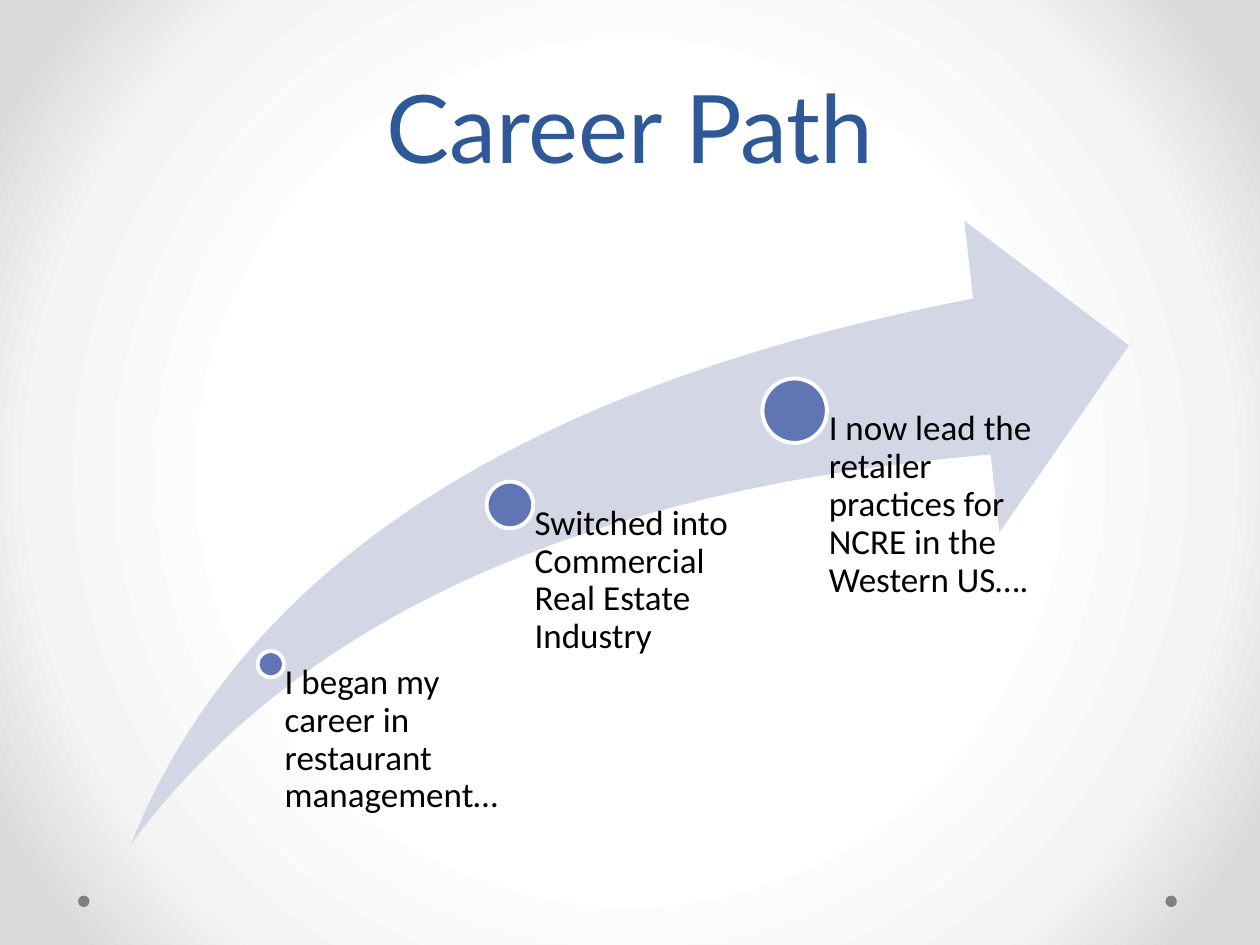
from lxml import etree
from pptx import Presentation
from pptx import util as u
from pptx.dml.color import RGBColor
from pptx.enum import shapes, text

TITLE = "Career Path"
STEPS = [
    ("I began my career in restaurant management…", 5.46, 13.39, 0.53, 4.7),
    ("Switched into Commercial Real Estate Industry", 10.28, 10.18, 0.94, 4.83),
    ("I now lead the retailer practices for NCRE in the Western US….", 16.02, 8.28, 1.3, 4.83),
]
CORNER_DOTS = [1.69, 23.61]
DOT_Y, DOT_SIZE = 18.17, 0.23
ARROW = (2.64, 4.45, 20.12, 12.57)
ARROW_BOTTOM = ARROW[1] + ARROW[3]
BACKGROUND = [(50, "FFFFFF"), (76, "F4F4F4"), (92, "DADADA")]
NS = "http://schemas.openxmlformats.org/drawingml/2006/main"


def rgb(value):
    return RGBColor.from_string(value)


def set_background(s, stops):
    s.background.fill.solid()
    bg_pr = s._element.cSld.bg.bgPr
    marks = "".join(
        f'<a:gs pos="{pos * 1000}"><a:srgbClr val="{color}"/></a:gs>' for pos, color in stops
    )
    grad = etree.fromstring(
        f'<a:gradFill xmlns:a="{NS}" rotWithShape="1"><a:gsLst>{marks}</a:gsLst>'
        '<a:path path="circle"><a:fillToRect l="50000" t="50000" r="50000" b="50000"/>'
        "</a:path></a:gradFill>"
    )
    bg_pr.replace(bg_pr[0], grad)


def add_shape(s, kind, left, top, width, height, fill, line=None):
    sp = s.shapes.add_shape(kind, u.Cm(left), u.Cm(top), u.Cm(width), u.Cm(height))
    sp.shadow.inherit = False
    sp.fill.solid()
    sp.fill.fore_color.rgb = rgb(fill)
    if line:
        sp.line.color.rgb = rgb(line)
        sp.line.width = u.Pt(2.25)
    else:
        sp.line.fill.background()
    return sp


def add_circle(s, x, y, size, fill, line=None):
    return add_shape(s, shapes.MSO_SHAPE.OVAL, x - size / 2, y - size / 2, size, size, fill, line)


def add_text(s, content, left, top, width, height, *, size, font, color, spacing,
             insets=(0, 0, 0, 0), align=text.PP_ALIGN.LEFT, anchor=text.MSO_ANCHOR.TOP):
    sp = s.shapes.add_textbox(u.Cm(left), u.Cm(top), u.Cm(width), u.Cm(height))
    tf = sp.text_frame
    tf.word_wrap = True
    tf.vertical_anchor = anchor
    tf.margin_left, tf.margin_top, tf.margin_right, tf.margin_bottom = map(u.Cm, insets)
    p = tf.paragraphs[0]
    p.alignment = align
    p.line_spacing = spacing
    r = p.add_run()
    r.text = content
    r.font.size = u.Pt(size)
    r.font.name = font
    r.font.color.rgb = rgb(color)
    return sp


def main():
    prs = Presentation()
    prs.slide_width, prs.slide_height = u.Cm(25.4), u.Cm(19.05)
    s = prs.slides.add_slide(prs.slide_layouts[6])
    set_background(s, BACKGROUND)

    for x in CORNER_DOTS:
        add_circle(s, x, DOT_Y, DOT_SIZE, "808080")

    add_text(s, TITLE, 1.27, 0.43, 22.86, 3.38, size=54, font="Lato", color="2F5897",
             spacing=u.Pt(58), insets=(0.25, 0.13, 0.25, 0.13),
             align=text.PP_ALIGN.CENTER, anchor=text.MSO_ANCHOR.BOTTOM)

    arrow = add_shape(s, shapes.MSO_SHAPE.SWOOSH_ARROW, *ARROW, "D2D6E5")
    arrow.adjustments[0] = arrow.adjustments[1] = 0.25

    for content, x, y, size, width in STEPS:
        add_circle(s, x, y, size, "6076B4", line="FFFFFF")
        add_text(s, content, x, y, width, ARROW_BOTTOM - y, size=20, font="Calibri",
                 color="000000", spacing=0.9, insets=(size * 0.53, 0, 0, 0))

    prs.save("out.pptx")


if __name__ == "__main__":
    main()
